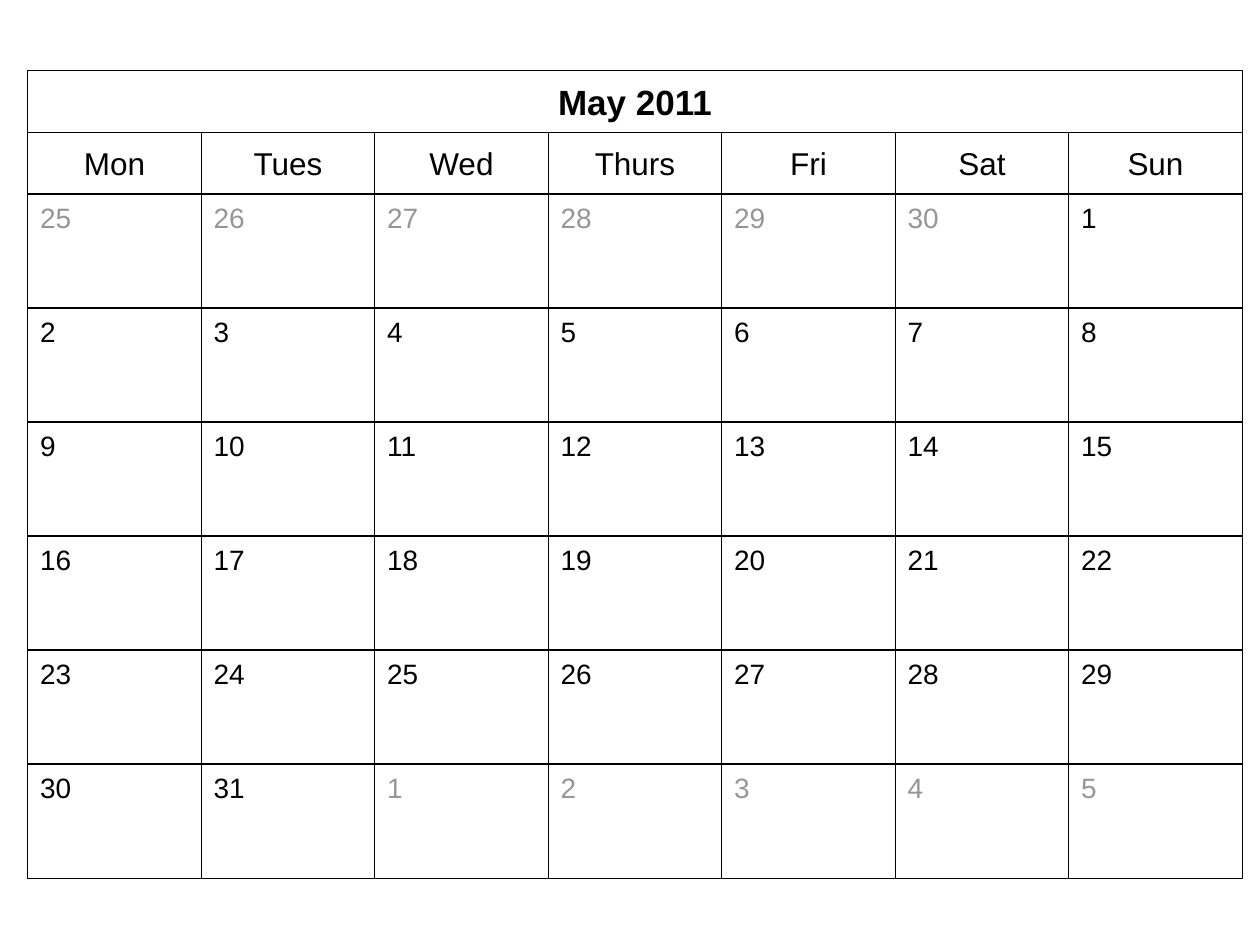
import itertools
import pptx
import pptx.dml.color
import pptx.enum.shapes
import pptx.enum.text
import pptx.util

Inches = pptx.util.Inches
Pt = pptx.util.Pt
Align = pptx.enum.text.PP_ALIGN
Anchor = pptx.enum.text.MSO_ANCHOR

THEME = {
    "font": "Arial",
    "ink": "000000",
    "pale": "969696",
    "paper": "FFFFFF",
    "line": Pt(0.75),
    "month": Pt(20),
    "day": Pt(18),
    "date": Pt(16),
}
SIZE = (10, 7.5)
LEFT, RIGHT = 0.22, 9.86
DAYS = ["Mon", "Tues", "Wed", "Thurs", "Fri", "Sat", "Sun"]
WEEKS = 6
STEP = (RIGHT - LEFT) / len(DAYS)
ROWS = [0.56, 1.05] + [1.54 + 0.905 * week for week in range(WEEKS + 1)]

HEAD = {
    "vertical_anchor": Anchor.MIDDLE,
    "margin_top": Inches(0.02),
    "margin_bottom": Inches(0.02),
}
BODY = {
    "vertical_anchor": Anchor.TOP,
    "margin_top": Inches(0.05),
    "margin_bottom": Inches(0.05),
}
FRAME = {
    "word_wrap": True,
    "auto_size": pptx.enum.text.MSO_AUTO_SIZE.NONE,
    "margin_left": Inches(0.1),
    "margin_right": Inches(0.1),
}


def apply(item, values):
    for name, value in values.items():
        setattr(item, name, value)


def tint(name):
    return pptx.dml.color.RGBColor.from_string(THEME[name])


def area(col, row, span=1):
    left, top = LEFT + col * STEP, ROWS[row]
    sides = (left, top, span * STEP, ROWS[row + 1] - top)
    return dict(zip(("left", "top", "width", "height"), map(Inches, sides)))


def box(slide, place):
    kind = pptx.enum.shapes.MSO_SHAPE.RECTANGLE
    shape = slide.shapes.add_shape(kind, *place.values())
    shape.shadow.inherit = False
    return shape


def edge(shape):
    shape.line.color.rgb = tint("ink")
    shape.line.width = THEME["line"]


def write(shape, text, size, color="ink", bold=False, align=Align.CENTER, form=HEAD):
    frame = shape.text_frame
    apply(frame, FRAME | form)
    frame.text = text
    para = frame.paragraphs[0]
    para.alignment = align
    font = para.runs[0].font
    apply(font, {"name": THEME["font"], "size": THEME[size], "bold": bold})
    font.color.rgb = tint(color)


def paint(shape):
    shape.fill.solid()
    shape.fill.fore_color.rgb = tint("paper")
    edge(shape)


def month(slide, text):
    title = slide.shapes.title
    apply(title, area(0, 0, len(DAYS)))
    paint(title)
    write(title, text, "month", bold=True)


def header(slide):
    for col, day in enumerate(DAYS):
        shape = box(slide, area(col, 1))
        paint(shape)
        write(shape, day, "day")


def dates(slide):
    april = [(day, "pale") for day in range(25, 31)]
    may = [(day, "ink") for day in range(1, 32)]
    june = [(day, "pale") for day in range(1, 6)]
    for spot, (day, color) in enumerate(itertools.chain(april, may, june)):
        week, col = divmod(spot, len(DAYS))
        shape = box(slide, area(col, week + 2))
        shape.fill.background()
        edge(shape)
        write(shape, str(day), "date", color, align=Align.LEFT, form=BODY)


def main():
    deck = pptx.Presentation()
    deck.slide_width, deck.slide_height = map(Inches, SIZE)
    slide = deck.slides.add_slide(deck.slide_layouts.get_by_name("Title Only"))
    month(slide, "May 2011")
    header(slide)
    dates(slide)
    deck.save("out.pptx")


if __name__ == "__main__":
    main()
